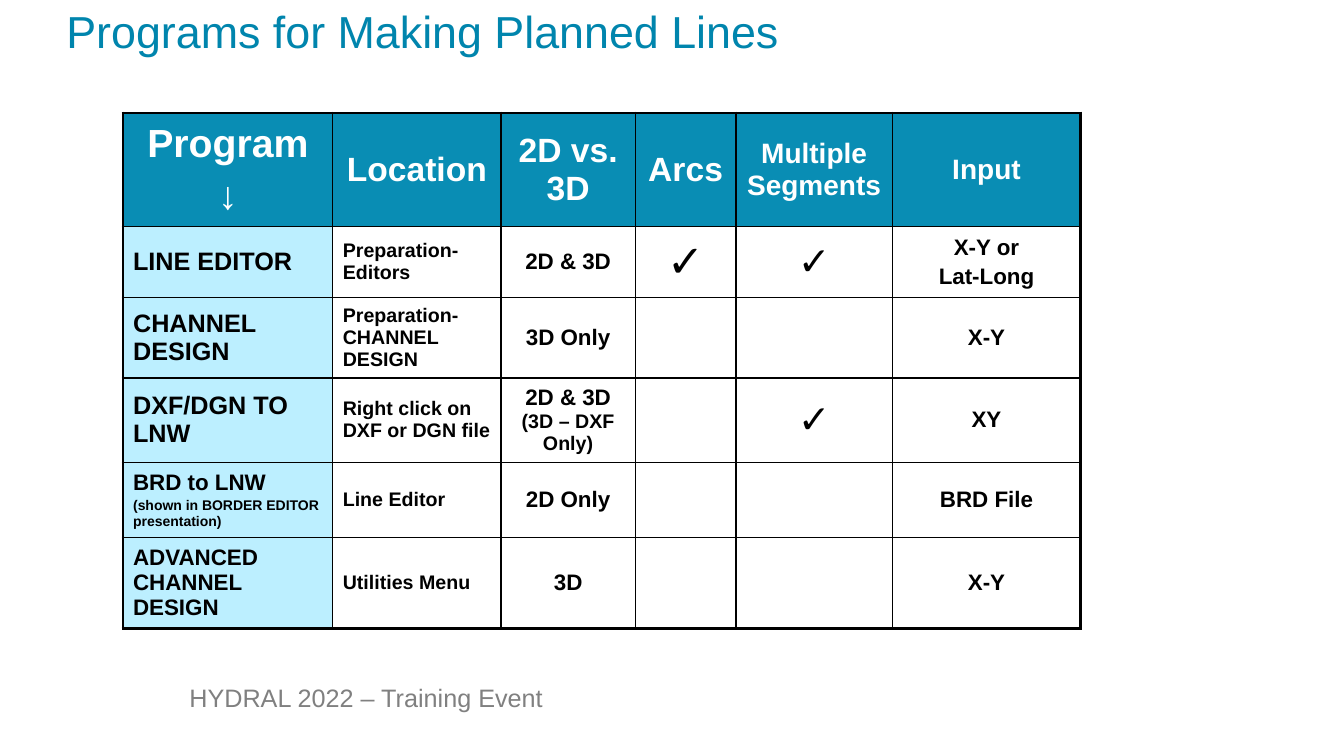
from lxml.etree import SubElement
from pptx import Presentation
from pptx.dml.color import RGBColor
from pptx.enum.text import MSO_ANCHOR, PP_ALIGN
from pptx.oxml.ns import qn
from pptx.util import Inches, Pt

TITLE_BLUE = RGBColor(0x00, 0x85, 0xAD)
HEADER_BLUE = RGBColor(0x09, 0x8D, 0xB4)
PROGRAM_BLUE = RGBColor(0xBC, 0xEF, 0xFF)
WHITE = RGBColor(0xFF, 0xFF, 0xFF)
BLACK = RGBColor(0x00, 0x00, 0x00)
GRAY = RGBColor(0x80, 0x80, 0x80)
FONT = "Arial"
THIN, THICK = 1, 2.25
COLUMN_WIDTHS = [2.08, 1.67, 1.33, 1, 1.55, 1.87]
ROW_HEIGHTS = [1.13, 0.7, 0.8, 0.83, 0.75, 0.9]


def single(text, size):
    """Return cell content of one paragraph with one run."""
    return [[(text, size)]]


EMPTY = []
CHECK = single("✓", 28)
PROGRAMS = [
    [[[("Program", 28)], [("↓", 28)]], single("Location", 24), single("2D vs. 3D", 24),
     single("Arcs", 24), single("Multiple Segments", 20), single("Input", 20)],
    [single("LINE EDITOR", 18), single("Preparation-Editors", 14), single("2D & 3D", 16),
     single("✓", 32), CHECK, [[("X-Y or", 16)], [("Lat-Long", 16)]]],
    [single("CHANNEL DESIGN", 18), single("Preparation-CHANNEL DESIGN", 14),
     single("3D Only", 16), EMPTY, EMPTY, single("X-Y", 16)],
    [single("DXF/DGN TO LNW", 18), single("Right click on DXF or DGN file", 14),
     [[("2D & 3D ", 16), ("(3D – DXF Only)", 14)]], EMPTY, CHECK, single("XY", 16)],
    [[[("BRD to LNW", 16)], [("(shown in BORDER EDITOR presentation)", 10)]],
     single("Line Editor", 14), single("2D Only", 16), EMPTY, EMPTY, single("BRD File", 16)],
    [single("ADVANCED CHANNEL DESIGN", 16), single("Utilities Menu", 14),
     single("3D", 16), EMPTY, EMPTY, single("X-Y", 16)],
]


def add_span(para, text, size, color, bold=False):
    """Add one formatted run to a paragraph."""
    span = para.add_run()
    span.text = text
    span.font.name = FONT
    span.font.size = Pt(size)
    span.font.bold = bold
    span.font.color.rgb = color


def add_label(page, left, top, width, height, text, size, color, wrap):
    """Place a one-paragraph text box and return its paragraph."""
    box = page.shapes.add_textbox(Inches(left), Inches(top), Inches(width), Inches(height))
    box.text_frame.word_wrap = wrap
    para = box.text_frame.paragraphs[0]
    add_span(para, text, size, color)
    return para


def add_title(page, left, top, width, height):
    """Place the slide title with its tight line spacing."""
    para = add_label(page, left, top, width, height,
                     "Programs for Making Planned Lines", 32, TITLE_BLUE, True)
    para.line_spacing = Pt(29)
    para._p.get_or_add_pPr().set("marL", str(Inches(0.06)))


def set_borders(cell, widths):
    """Draw the cell borders, given in points by side."""
    properties = cell._tc.get_or_add_tcPr()
    for index, (side, width) in enumerate(widths.items()):
        line = SubElement(properties, qn(f"a:ln{side}"), w=str(Pt(width)))
        fill = SubElement(line, qn("a:solidFill"))
        SubElement(fill, qn("a:srgbClr"), val=str(BLACK))
        properties.insert(index, line)


def fill_cell(cell, paragraphs, fill, color, align):
    """Set the background and text of one cell."""
    cell.fill.solid()
    cell.fill.fore_color.rgb = fill
    cell.vertical_anchor = MSO_ANCHOR.MIDDLE
    for index, spans in enumerate(paragraphs):
        frame = cell.text_frame
        para = frame.add_paragraph() if index else frame.paragraphs[0]
        para.alignment = align
        if index:
            para.space_before = Pt(spans[0][1] * 0.2)
        for text, size in spans:
            add_span(para, text, size, color, True)


def add_program_table(page, left, top):
    """Place the comparison table of the line-making programs."""
    last_row, last_column = len(ROW_HEIGHTS) - 1, len(COLUMN_WIDTHS) - 1
    table = page.shapes.add_table(
        len(ROW_HEIGHTS), len(COLUMN_WIDTHS), Inches(left), Inches(top),
        Inches(sum(COLUMN_WIDTHS)), Inches(sum(ROW_HEIGHTS))).table
    table.first_row = table.horz_banding = False
    for column, width in zip(table.columns, COLUMN_WIDTHS):
        column.width = Inches(width)
    for row, height in zip(table.rows, ROW_HEIGHTS):
        row.height = Inches(height)
    for row, programs in enumerate(PROGRAMS):
        for column, paragraphs in enumerate(programs):
            cell = table.cell(row, column)
            header = row == 0
            fill = HEADER_BLUE if header else WHITE if column else PROGRAM_BLUE
            align = PP_ALIGN.CENTER if header or column > 1 else PP_ALIGN.LEFT
            fill_cell(cell, paragraphs, fill, WHITE if header else BLACK, align)
            set_borders(cell, {
                "L": THICK if column == 0 else THIN,
                "R": THICK if column == last_column else THIN,
                "T": THICK if header else THIN,
                "B": THICK if row == last_row else THIN,
            })


def main():
    """Build and save the slide."""
    deck = Presentation()
    deck.slide_width, deck.slide_height = Inches(13.33), Inches(7.5)
    page = deck.slides.add_slide(deck.slide_layouts[6])
    add_label(page, 1.78, 6.72, 3.75, 0.4, "HYDRAL 2022 – Training Event", 18, GRAY, False)
    add_title(page, 0.5, 0.12, 12.33, 1.08)
    add_program_table(page, 1.22, 1.12)
    deck.save("out.pptx")


if __name__ == "__main__":
    main()
